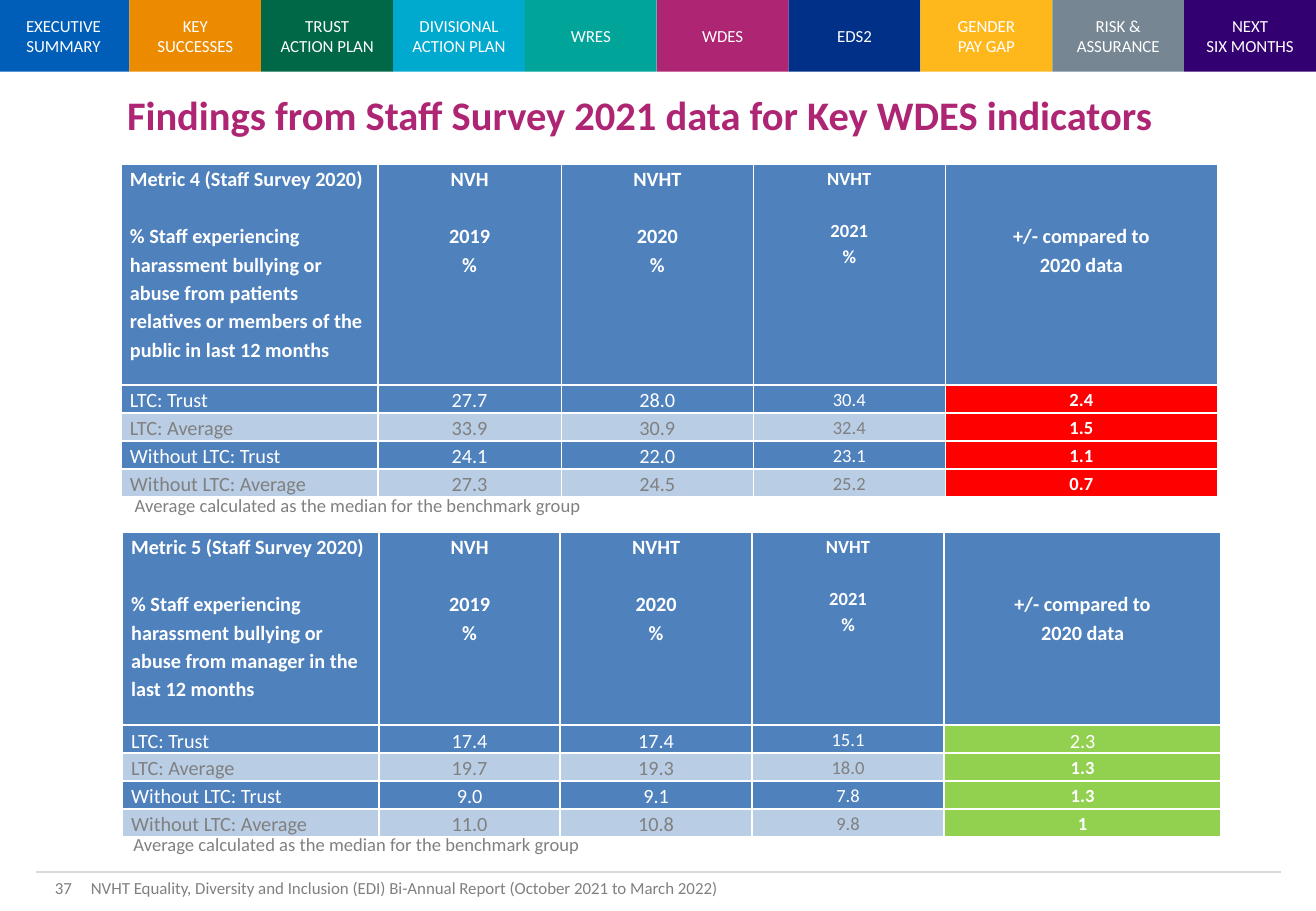
from lxml.etree import SubElement
from pptx import Presentation
from pptx.dml.color import RGBColor
from pptx.enum.shapes import MSO_CONNECTOR, MSO_SHAPE
from pptx.enum.text import MSO_ANCHOR, PP_ALIGN
from pptx.oxml.ns import qn
from pptx.util import Inches, Pt

WHITE = "FFFFFF"
GREY = "808080"
BLUE = "4F81BD"
PALE_BLUE = "B9CDE5"
RED = "FF0000"
GREEN = "92D050"
PLUM = "AE2573"

TAB_WIDTH = 1.085
TABS = [
    ("EXECUTIVE SUMMARY", "005EB8"),
    ("KEY\nSUCCESSES", "ED8B00"),
    ("TRUST\nACTION PLAN", "006747"),
    ("DIVISIONAL\nACTION PLAN", "00A9CE"),
    ("WRES", "00A499"),
    ("WDES", PLUM),
    ("EDS2", "003087"),
    ("GENDER\nPAY GAP", "FFB81C"),
    ("RISK & ASSURANCE", "768692"),
    ("NEXT\nSIX MONTHS", "330072"),
]

LINE_SPACING = 1.15
LINE_FACTOR = 1.22 * LINE_SPACING
ROW_HEIGHT = 0.23
GROUPS = ["LTC: Trust", "LTC: Average", "Without LTC: Trust", "Without LTC: Average"]
YEAR_HEADERS = ["NVH\n2019\n%", "NVHT\n2020\n%", "NVHT\n2021\n%"]
COLUMN_SIZES = [12, 12, 12, 11, 11]
METRIC_4 = [
    ["27.7", "28.0", "30.4", "2.4"],
    ["33.9", "30.9", "32.4", "1.5"],
    ["24.1", "22.0", "23.1", "1.1"],
    ["27.3", "24.5", "25.2", "0.7"],
]
METRIC_5 = [
    ["17.4", "17.4", "15.1", "2.3"],
    ["19.7", "19.3", "18.0", "1.3"],
    ["9.0", "9.1", "7.8", "1.3"],
    ["11.0", "10.8", "9.8", "1"],
]


def rgb(color):
    return RGBColor.from_string(color)


def write_text(frame, text, size=12, color=WHITE, bold=False,
               align=PP_ALIGN.LEFT, spacing=1.0, first_gap=0):
    frame.word_wrap = True
    for index, line in enumerate(text.split("\n")):
        para = frame.add_paragraph() if index else frame.paragraphs[0]
        para.alignment = align
        para.line_spacing = spacing
        if index == 1:
            para.space_before = Pt(first_gap)
        span = para.add_run()
        span.text = line
        span.font.name = "Calibri"
        span.font.size = Pt(size)
        span.font.bold = bold
        span.font.color.rgb = rgb(color)


def add_label(page, text, left, top, width, height, anchor=MSO_ANCHOR.TOP, **style):
    box = page.shapes.add_textbox(Inches(left), Inches(top), Inches(width), Inches(height))
    box.text_frame.vertical_anchor = anchor
    write_text(box.text_frame, text, **style)


def add_tab(page, index, text, color):
    tab = page.shapes.add_shape(
        MSO_SHAPE.RECTANGLE, Inches(index * TAB_WIDTH - 0.02), Inches(0),
        Inches(TAB_WIDTH), Inches(0.59))
    tab.shadow.inherit = False
    tab.fill.solid()
    tab.fill.fore_color.rgb = rgb(color)
    tab.line.fill.background()
    tab.text_frame.vertical_anchor = MSO_ANCHOR.MIDDLE
    write_text(tab.text_frame, text, size=10, align=PP_ALIGN.CENTER)


def add_rule(page, left, right, top):
    rule = page.shapes.add_connector(
        MSO_CONNECTOR.STRAIGHT, Inches(left), Inches(top), Inches(right), Inches(top))
    rule.line.color.rgb = rgb("D9D9D9")
    rule.line.width = Pt(0.75)
    SubElement(rule._element.spPr, qn("a:effectLst"))


def fill_cell(cell, text, fill, top_inset=0, **style):
    cell.margin_left = cell.margin_right = Inches(0.07)
    cell.margin_top = Inches(top_inset)
    cell.margin_bottom = Inches(0)
    properties = cell._tc.get_or_add_tcPr()
    for side in ("a:lnL", "a:lnR", "a:lnT", "a:lnB"):
        border = SubElement(properties, qn(side), w=str(Pt(1)))
        paint = SubElement(border, qn("a:solidFill"))
        SubElement(paint, qn("a:srgbClr"), val=WHITE)
    cell.fill.solid()
    cell.fill.fore_color.rgb = rgb(fill)
    write_text(cell.text_frame, text, spacing=LINE_SPACING, **style)


def add_metric_table(page, left, top, widths, header_height, title, values,
                     change_fill, plain_changes=()):
    frame = page.shapes.add_table(
        len(values) + 1, len(widths), Inches(left), Inches(top), Inches(sum(widths)),
        Inches(header_height + ROW_HEIGHT * len(values)))
    table = frame.table
    table.first_row = False
    table.horz_banding = False
    for column, width in zip(table.columns, widths):
        column.width = Inches(width)
    for index, row in enumerate(table.rows):
        row.height = Inches(ROW_HEIGHT if index else header_height)

    for column, text in enumerate([title] + YEAR_HEADERS):
        size = COLUMN_SIZES[column]
        fill_cell(table.cell(0, column), text, BLUE, size=size, bold=True,
                  align=PP_ALIGN.CENTER if column else PP_ALIGN.LEFT,
                  first_gap=size * LINE_FACTOR)
    fill_cell(table.cell(0, 4), "+/- compared to\n2020 data", BLUE, top_inset=0.47,
              bold=True, align=PP_ALIGN.CENTER)

    for row, (group, numbers) in enumerate(zip(GROUPS, values), start=1):
        is_trust = row % 2 == 1
        fill = BLUE if is_trust else PALE_BLUE
        color = WHITE if is_trust else GREY
        for column, text in enumerate([group] + numbers[:3]):
            fill_cell(table.cell(row, column), text, fill, color=color,
                      size=COLUMN_SIZES[column],
                      align=PP_ALIGN.CENTER if column else PP_ALIGN.LEFT)
        is_plain = row in plain_changes
        fill_cell(table.cell(row, 4), numbers[3], change_fill, bold=not is_plain,
                  size=12 if is_plain else COLUMN_SIZES[4], align=PP_ALIGN.CENTER)


def main():
    deck = Presentation()
    deck.slide_width = Inches(10.83)
    deck.slide_height = Inches(7.5)
    page = deck.slides.add_slide(deck.slide_layouts[6])

    add_rule(page, 0.3, 10.54, 7.18)
    for index, (text, color) in enumerate(TABS):
        add_tab(page, index, text, color)
    add_label(page, "Findings from Staff Survey 2021 data for Key WDES indicators",
              0.53, 0.69, 9.47, 0.5, size=24, color=PLUM, bold=True,
              align=PP_ALIGN.CENTER)

    add_metric_table(
        page, 1, 1.35, [2.11, 1.51, 1.58, 1.58, 2.24], 1.82,
        "Metric 4 (Staff Survey 2020)\n% Staff experiencing harassment bullying or "
        "abuse from patients relatives or members of the public in last 12 months",
        METRIC_4, RED)
    add_metric_table(
        page, 1.01, 4.38, [2.11, 1.49, 1.58, 1.58, 2.28], 1.59,
        "Metric 5 (Staff Survey 2020)\n% Staff experiencing harassment bullying or "
        "abuse from manager in the last 12 months",
        METRIC_5, GREEN, plain_changes=(1,))
    for left, top in [(1.01, 4.02), (1, 6.81)]:
        add_label(page, "Average calculated as the median for the benchmark group",
                  left, top, 6.5, 0.29, size=11, color=GREY)

    add_label(page, "37", 0.08, 7.13, 0.61, 0.36, anchor=MSO_ANCHOR.MIDDLE,
              size=10, color=GREY, align=PP_ALIGN.RIGHT)
    add_label(page, "NVHT Equality, Diversity and Inclusion (EDI) Bi-Annual Report "
              "(October 2021 to March 2022)", 0.65, 7.18, 8.5, 0.27, size=10, color=GREY)
    deck.save("out.pptx")


if __name__ == "__main__":
    main()
